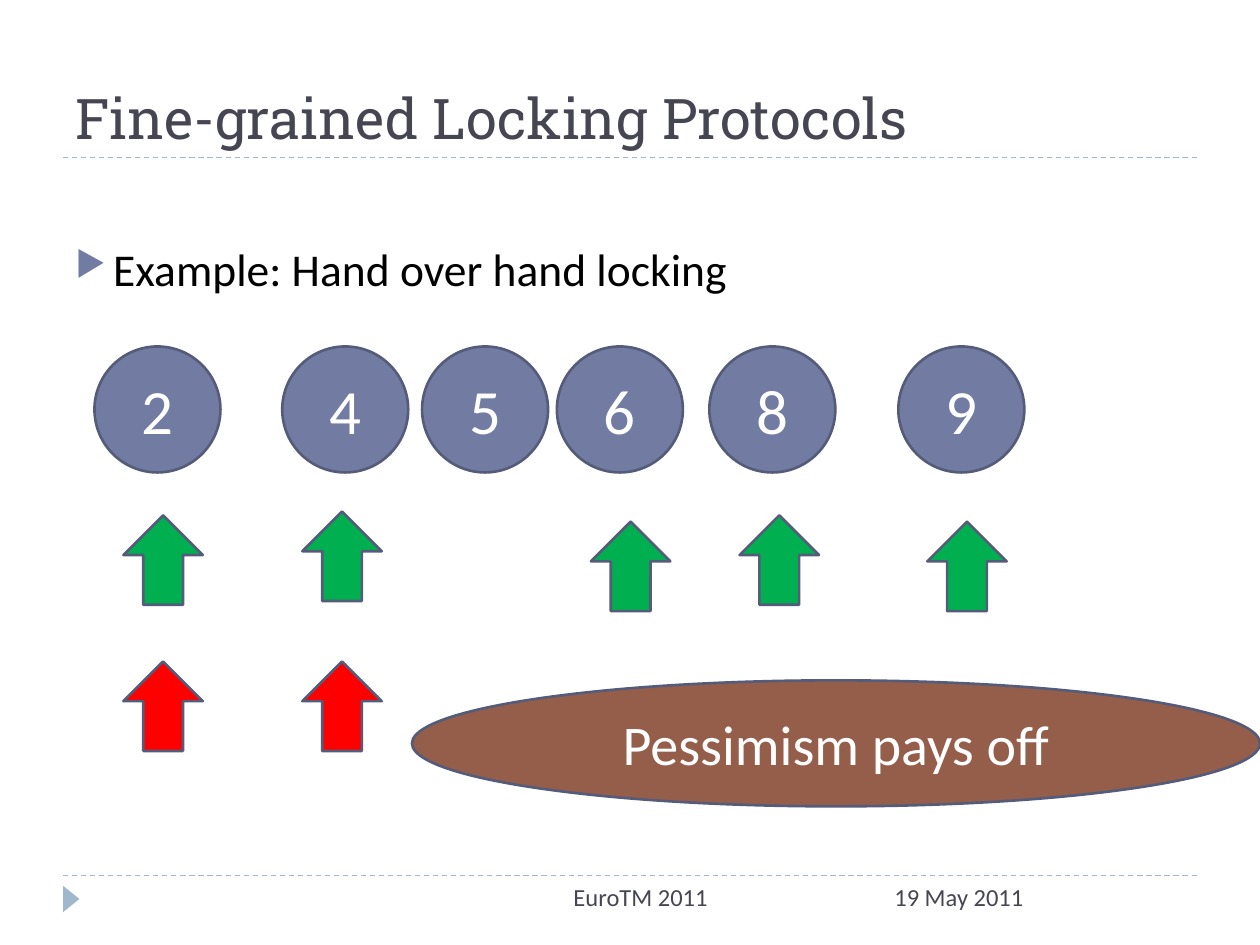
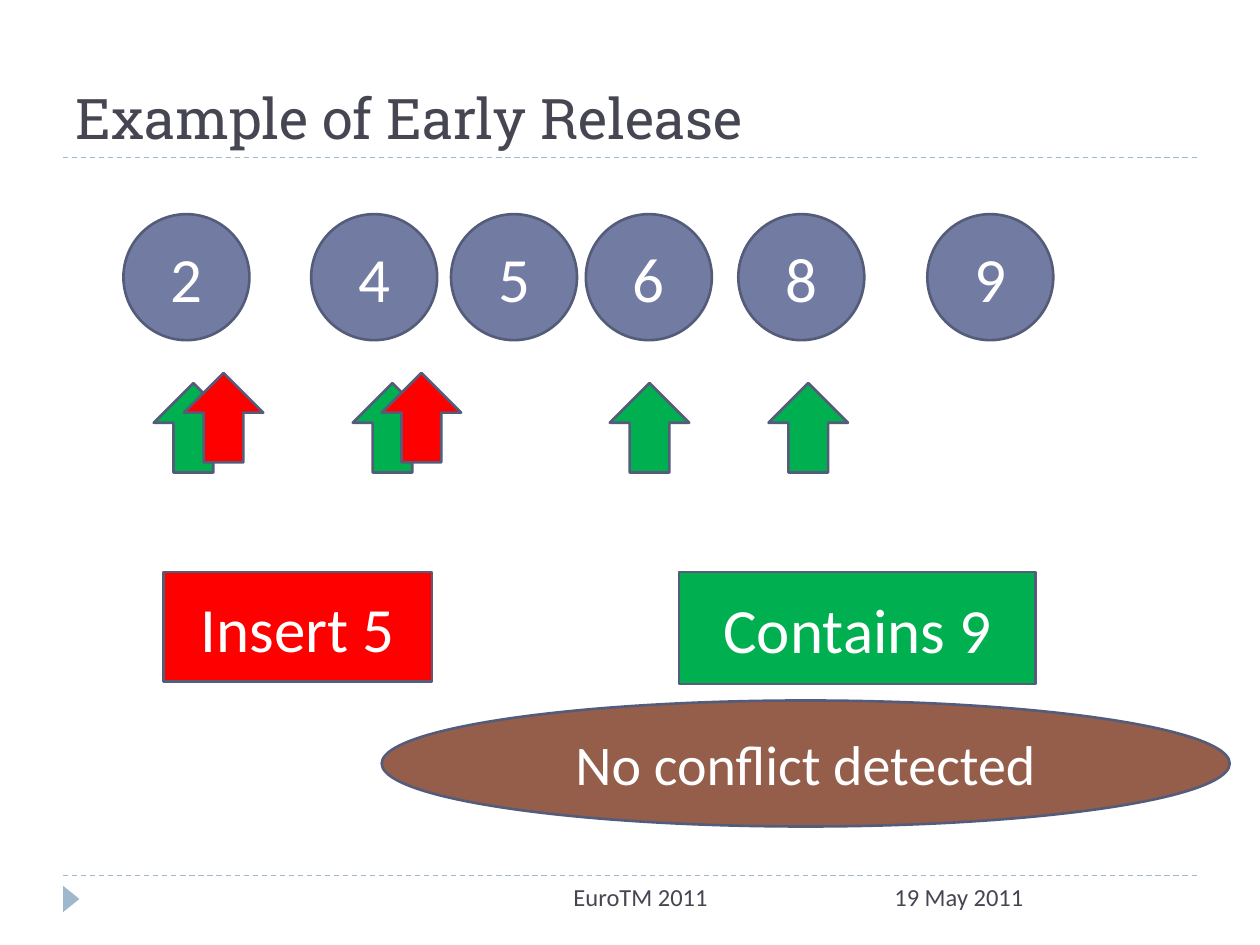
from lxml import etree
from pptx import Presentation
from pptx.dml.color import RGBColor
from pptx.enum import dml, shapes, text
from pptx.oxml.ns import qn
from pptx.util import Inches, Pt

COLORS = {
    "title": "464653", "body": "000000", "light": "FFFFFF", "rule": "9FB8CD",
    "node": "727CA3", "outline": "545C79", "green": "00B050", "red": "FF0000",
    "callout": "955E4B",
}
TITLE_FONT, BODY_FONT = "Roboto Slab", "Calibri"
SHAPE, ALIGN = shapes.MSO_SHAPE, text.PP_ALIGN


def write(target, words, size, color, font=BODY_FONT, align=ALIGN.LEFT):
    target.text_frame.text = words
    target.text_frame.word_wrap = True
    paragraph = target.text_frame.paragraphs[0]
    paragraph.alignment = align
    run_font = paragraph.runs[0].font
    run_font.name, run_font.size = font, Pt(size)
    run_font.color.rgb = RGBColor.from_string(COLORS[color])


def draw(slide, preset, box, fill, words="", size=36, outline="outline"):
    figure = slide.shapes.add_shape(preset, *map(Inches, box))
    figure.shadow.inherit = False
    figure.fill.solid()
    figure.fill.fore_color.rgb = RGBColor.from_string(COLORS[fill])
    if outline:
        figure.line.color.rgb = RGBColor.from_string(COLORS[outline])
        figure.line.width = Pt(1.5)
    else:
        figure.line.fill.background()
    if words:
        write(figure, words, size, "light", align=ALIGN.CENTER)
        figure.text_frame.vertical_anchor = text.MSO_ANCHOR.MIDDLE
    return figure


# The linked list is the same on both slides; only its origin moves
NODE_OFFSETS = {"2": 0, "4": 1.49, "5": 2.6, "6": 3.67, "8": 4.88, "9": 6.38}
ARROW_SIZE = (0.63, 0.71)

SLIDES = [
    {
        "title": "Fine-grained Locking Protocols",
        "list_origin": (0.75, 2.75),
        "arrows": [("green", 0.98, 4.09), ("green", 2.4, 4.06), ("green", 4.69, 4.14),
                   ("green", 5.87, 4.09), ("green", 7.36, 4.14),
                   ("red", 0.98, 5.25), ("red", 2.4, 5.25)],
        "operations": [],
        "callout": ("Pessimism pays off", 3.27, 5.4),
    },
    {
        "title": "Example of Early Release",
        "list_origin": (0.98, 1.7),
        "arrows": [("green", 1.22, 3.04), ("green", 2.8, 3.04), ("green", 4.84, 3.04),
                   ("green", 6.1, 3.04), ("red", 1.46, 2.96), ("red", 3.03, 2.96)],
        "operations": [("Insert 5", "red", (1.3, 4.54, 2.13, 0.87)),
                       ("Contains 9", "green", (5.39, 4.54, 2.83, 0.89))],
        "callout": ("No conflict detected", 3.03, 5.56),
    },
]

prs = Presentation()
prs.slide_width, prs.slide_height = Inches(10), Inches(7.5)

for content in SLIDES:
    slide = prs.slides.add_slide(prs.slide_layouts[5])

    # Dashed rules and footer marker
    for y in (6.95, 1.25):
        rule = slide.shapes.add_connector(
            shapes.MSO_CONNECTOR.STRAIGHT, Inches(0.5), Inches(y), Inches(9.5), Inches(y))
        rule.line.color.rgb = RGBColor.from_string(COLORS["rule"])
        rule.line.width = Pt(0.75)
        rule.line.dash_style = dml.MSO_LINE.DASH
        etree.SubElement(rule.element.spPr, qn("a:effectLst"))
    marker = draw(slide, SHAPE.ISOSCELES_TRIANGLE, (0.46, 7.07, 0.21, 0.13), "rule", outline=None)
    marker.rotation = 90

    # Title
    title = slide.shapes.title
    title.left, title.top, title.width, title.height = map(Inches, (0.5, 0.17, 9, 1.08))
    write(title, content["title"], 32, "title", TITLE_FONT)
    title.text_frame.vertical_anchor = text.MSO_ANCHOR.BOTTOM

    # Footer: date and event
    for words, left, width, align in (("19 May 2011", 7, 2.5, ALIGN.LEFT),
                                      ("EuroTM 2011", 3.17, 3.83, ALIGN.CENTER)):
        footer = slide.shapes.add_textbox(*map(Inches, (left, 6.95, width, 0.4)))
        write(footer, words, 14, "title", align=align)

    # List nodes
    list_left, list_top = content["list_origin"]
    for value, offset in NODE_OFFSETS.items():
        draw(slide, SHAPE.OVAL, (list_left + offset, list_top, 1, 1), "node", value)

    # Lock arrows
    for color, left, top in content["arrows"]:
        draw(slide, SHAPE.UP_ARROW, (left, top, *ARROW_SIZE), color)

    # Operations and conclusion
    for words, color, box in content["operations"]:
        draw(slide, SHAPE.RECTANGLE, box, color, words)
    words, left, top = content["callout"]
    draw(slide, SHAPE.OVAL, (left, top, 6.73, 1), "callout", words, 32)

# Bulleted example on the first slide
example = prs.slides[0].shapes.add_textbox(*map(Inches, (0.5, 1.33, 9, 5.4)))
write(example, "Example: Hand over hand locking", 26, "body")
example.text_frame.margin_top = Inches(0.58)
bullet = example.text_frame.paragraphs[0]._p.get_or_add_pPr()
bullet.set("marL", str(Inches(0.3)))
bullet.set("indent", str(Inches(-0.3)))
bullet_color = etree.SubElement(bullet, qn("a:buClr"))
etree.SubElement(bullet_color, qn("a:srgbClr"), val=COLORS["node"])
etree.SubElement(bullet, qn("a:buSzPct"), val="76000")
etree.SubElement(bullet, qn("a:buChar"), char="▶")

prs.save("out.pptx")
